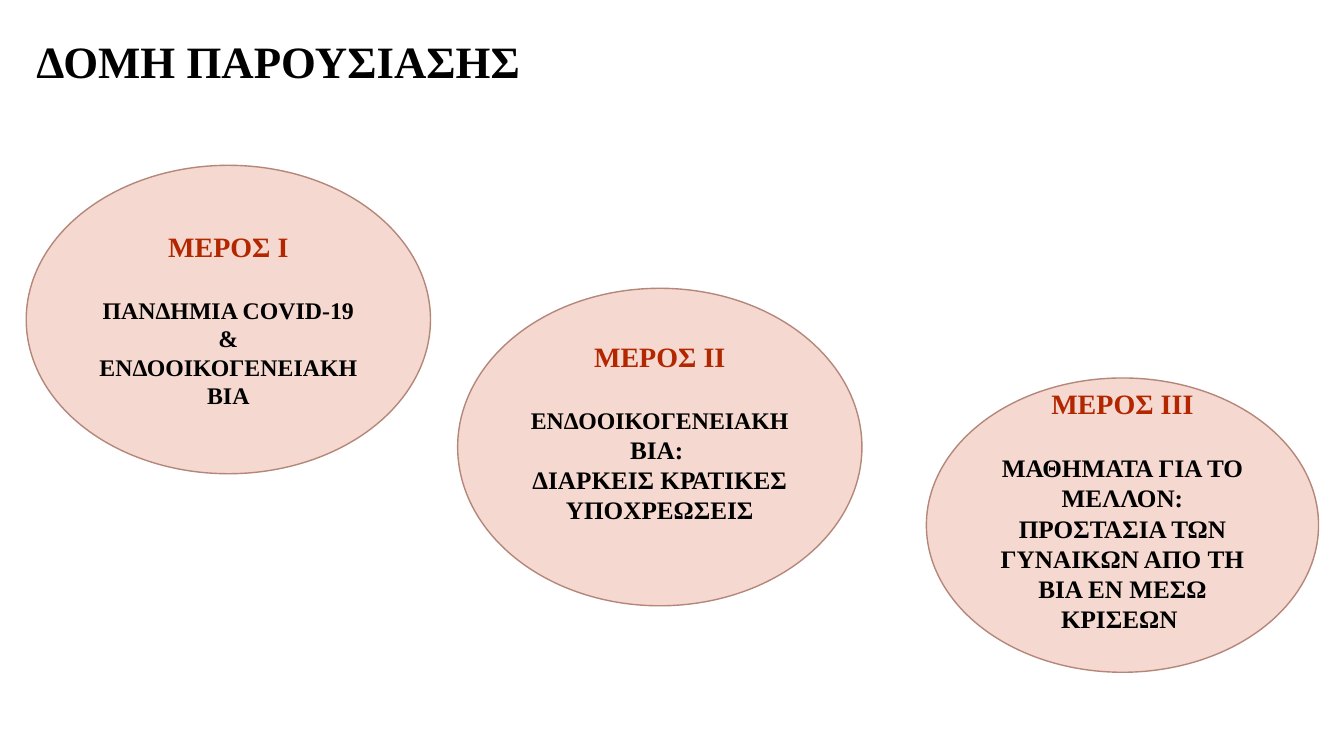
import pptx
import pptx.dml.color
import pptx.enum.shapes
import pptx.enum.text
import pptx.util

Pt = pptx.util.Pt
PP_ALIGN = pptx.enum.text.PP_ALIGN
MSO_ANCHOR = pptx.enum.text.MSO_ANCHOR


def color(hex_string):
    return pptx.dml.color.RGBColor.from_string(hex_string)


class Deck:
    """Style and current slide; boxes are (left, top, width, height) in percent of the slide."""

    FONT = "Times New Roman"
    INK, ACCENT, FILL, LINE = "000000", "B22600", "F5D8CF", "B5877B"

    def __init__(self):
        self.prs = pptx.Presentation()
        self.prs.slide_width = pptx.util.Inches(13.33)
        self.prs.slide_height = pptx.util.Inches(7.5)
        self.s = self.prs.slides.add_slide(self.prs.slide_layouts[5])

    def lengths(self, box):
        sides = (self.prs.slide_width, self.prs.slide_height) * 2
        return [int(side * share / 100) for side, share in zip(sides, box)]

    def run(self, p, text, size, ink):
        r = p.add_run()
        r.text = text
        r.font.name = self.FONT
        r.font.size = Pt(size)
        r.font.bold = True
        r.font.color.rgb = color(ink)

    def title(self, text, box):
        sp = self.s.shapes.title
        sp.left, sp.top, sp.width, sp.height = self.lengths(box)
        tf = sp.text_frame
        tf.word_wrap = True
        tf.auto_size = pptx.enum.text.MSO_AUTO_SIZE.NONE
        tf.vertical_anchor = MSO_ANCHOR.TOP
        p = tf.paragraphs[0]
        p.alignment = PP_ALIGN.LEFT
        p.line_spacing = 0.9
        self.run(p, text, 32, self.INK)

    def oval(self, box, heading, gap, paragraphs, lift=0):
        """Part of the talk: gap follows the heading, lift pads the bottom (points)."""
        sp = self.s.shapes.add_shape(pptx.enum.shapes.MSO_SHAPE.OVAL, *self.lengths(box))
        sp.shadow.inherit = False
        sp.fill.solid()
        sp.fill.fore_color.rgb = color(self.FILL)
        sp.line.color.rgb = color(self.LINE)
        sp.line.width = Pt(1)
        tf = sp.text_frame
        tf.word_wrap = True
        tf.vertical_anchor = MSO_ANCHOR.MIDDLE
        tf.margin_bottom += Pt(lift)
        p = tf.paragraphs[0]
        p.alignment = PP_ALIGN.CENTER
        p.space_after = Pt(gap)
        self.run(p, heading, 20, self.ACCENT)
        for runs in paragraphs:
            p = tf.add_paragraph()
            p.alignment = PP_ALIGN.CENTER
            for text, size in runs:
                self.run(p, text, size, self.INK)


def main():
    deck = Deck()
    deck.title("ΔΟΜΗ ΠΑΡΟΥΣΙΑΣΗΣ", (1.95, 4.53, 96.23, 14.53))
    deck.oval((1.95, 21.87, 30.08, 40.8), "ΜΕΡΟΣ Ι", 23, [
        [("ΠΑΝΔΗΜΙΑ COVID-19", 17)],
        [("&", 17)],
        [("ΕΝΔΟΟΙΚΟΓΕΝΕΙΑΚΗ ΒΙΑ", 17)],
    ])
    deck.oval((34.05, 38.13, 30.08, 42), "ΜΕΡΟΣ ΙΙ", 22, [
        [("ΕΝΔΟΟΙΚΟΓΕΝΕΙΑΚΗ", 17), (" ΒΙΑ: ", 18)],
        [("ΔΙΑΡΚΕΙΣ ΚΡΑΤΙΚΕΣ ΥΠΟΧΡΕΩΣΕΙΣ", 18)],
    ], lift=21)
    deck.oval((68.93, 50, 29.18, 38.93), "ΜΕΡΟΣ ΙΙΙ", 23, [
        [("ΜΑΘΗΜΑΤΑ ΓΙΑ ΤΟ ΜΕΛΛΟΝ: ΠΡΟΣΤΑΣΙΑ ΤΩΝ ΓΥΝΑΙΚΩΝ ΑΠO ΤΗ ΒΙΑ ΕΝ ΜΕΣΩ ΚΡΙΣΕΩΝ ", 18)],
    ], lift=21)
    deck.prs.save("out.pptx")


if __name__ == "__main__":
    main()
